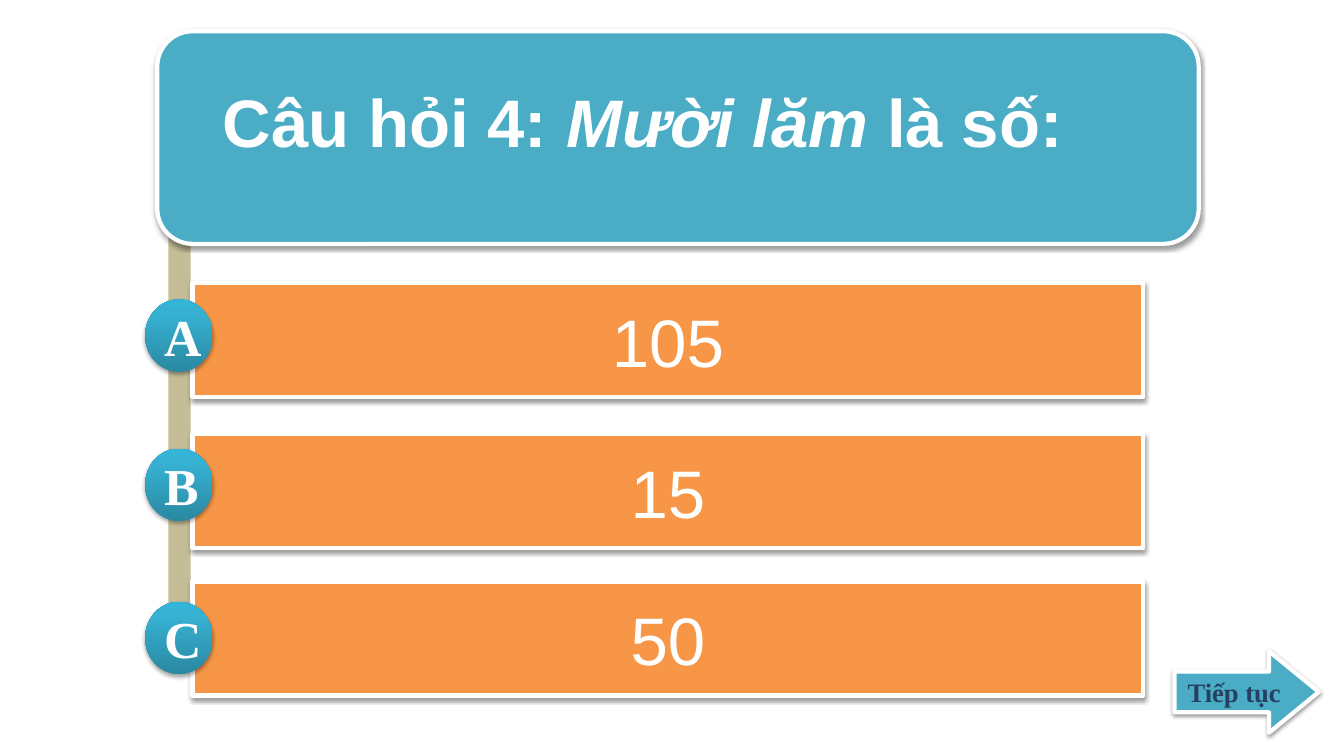
from dataclasses import dataclass

from lxml import etree
from pptx import Presentation
from pptx import util as u
from pptx.dml.color import RGBColor
from pptx.enum import shapes, text
from pptx.oxml import ns

WHITE = RGBColor(0xFF, 0xFF, 0xFF)
TEAL = RGBColor(0x4B, 0xAC, 0xC6)
ORANGE = RGBColor(0xF7, 0x96, 0x46)
TAN = RGBColor(0xC4, 0xBD, 0x97)
NAVY = RGBColor(0x25, 0x40, 0x61)
BADGE_STOPS = (
    (0, RGBColor(0x2A, 0x88, 0xA2)),
    (80, RGBColor(0x37, 0xB1, 0xD2)),
    (100, RGBColor(0x34, 0xB4, 0xD6)),
)
SANS, SERIF = "Arial", "Times New Roman"
SHAPE = shapes.MSO_SHAPE


@dataclass(frozen=True)
class Box:
    left: float
    top: float
    width: float
    height: float

    def lengths(self) -> tuple:
        return tuple(u.Inches(n) for n in (self.left, self.top, self.width, self.height))


@dataclass(frozen=True)
class Style:
    font: str
    size: float
    color: RGBColor
    bold: bool = False


@dataclass(frozen=True)
class Answer:
    letter: str
    label: str
    bar_top: float
    badge_top: float


ANSWER_STYLE = Style(SANS, 48, WHITE)
BADGE_STYLE = Style(SERIF, 37, WHITE, True)
TITLE_STYLE = Style(SANS, 48, WHITE, True)
NEXT_STYLE = Style(SERIF, 19, NAVY, True)
ANSWERS = (
    Answer("A", "105", 2.81, 2.97),
    Answer("B", "15", 4.31, 4.45),
    Answer("C", "50", 5.77, 5.97),
)
TITLE_SPANS = (("Câu hỏi 4: ", False), ("Mười lăm", True), (" là số:", False))


def set_font(para, style: Style) -> None:
    para.font.name = style.font
    para.font.size = u.Pt(style.size)
    para.font.bold = style.bold
    para.font.color.rgb = style.color


def add_shadow(shape, distance: float, opacity: int) -> None:
    effects = shape._element.spPr.find(ns.qn("a:effectLst"))
    shadow = etree.SubElement(
        effects, ns.qn("a:outerShdw"), blurRad=str(u.Pt(3.1)), dist=str(u.Pt(distance)),
        dir="5400000", rotWithShape="0")
    color = etree.SubElement(shadow, ns.qn("a:srgbClr"), val="000000")
    etree.SubElement(color, ns.qn("a:alpha"), val=str(opacity * 1000))


def add_plain(page, kind, box: Box):
    shape = page.shapes.add_shape(kind, *box.lengths())
    shape.shadow.inherit = False
    shape.line.fill.background()
    return shape


def add_panel(page, kind, box: Box, color: RGBColor):
    panel = add_plain(page, kind, box)
    panel.fill.solid()
    panel.fill.fore_color.rgb = color
    panel.line.color.rgb = WHITE
    panel.line.width = u.Pt(3)
    add_shadow(panel, 1.6, 38)
    return panel


def write_label(shape, label: str, style: Style) -> None:
    frame = shape.text_frame
    frame.word_wrap = True
    frame.vertical_anchor = text.MSO_ANCHOR.MIDDLE
    para = frame.paragraphs[0]
    para.text = label
    para.alignment = text.PP_ALIGN.CENTER
    set_font(para, style)


def add_badge(page, box: Box, letter: str) -> None:
    badge = add_plain(page, SHAPE.OVAL, box)
    badge.fill.gradient()
    badge.fill.gradient_angle = 90
    stops = badge._element.spPr.find(ns.qn("a:gradFill")).find(ns.qn("a:gsLst"))
    for stop in list(stops):
        stops.remove(stop)
    for position, color in BADGE_STOPS:
        stop = etree.SubElement(stops, ns.qn("a:gs"), pos=str(position * 1000))
        etree.SubElement(stop, ns.qn("a:srgbClr"), val=str(color))
    add_shadow(badge, 1.8, 35)
    write_label(badge, letter, BADGE_STYLE)


def add_answer(page, answer: Answer) -> None:
    bar = add_panel(page, SHAPE.RECTANGLE, Box(1.91, answer.bar_top, 9.43, 1.13), ORANGE)
    write_label(bar, answer.label, ANSWER_STYLE)
    add_badge(page, Box(1.44, answer.badge_top, 0.67, 0.72), answer.letter)


def add_title(page) -> None:
    title = page.shapes.add_textbox(*Box(2.11, 0.75, 9.22, 0.91).lengths())
    frame = title.text_frame
    frame.word_wrap = True
    frame.auto_size = text.MSO_AUTO_SIZE.SHAPE_TO_FIT_TEXT
    para = frame.paragraphs[0]
    for words, italic in TITLE_SPANS:
        span = para.add_run()
        span.text = words
        span.font.italic = italic
    set_font(para, TITLE_STYLE)


def main() -> None:
    deck = Presentation()
    deck.slide_width = u.Inches(13.33)
    deck.slide_height = u.Inches(7.5)
    page = deck.slides.add_slide(deck.slide_layouts[6])

    rail = add_plain(page, SHAPE.RECTANGLE, Box(1.67, 2.19, 0.22, 4.22))
    rail.fill.solid()
    rail.fill.fore_color.rgb = TAN
    add_panel(page, SHAPE.ROUNDED_RECTANGLE, Box(1.56, 0.31, 10.33, 2.11), TEAL)
    for answer in ANSWERS:
        add_answer(page, answer)
    add_title(page)

    arrow = add_panel(page, SHAPE.RIGHT_ARROW, Box(11.65, 6.46, 1.43, 0.81), TEAL)
    arrow.adjustments[0] = 0.5
    arrow.adjustments[1] = 0.61
    write_label(arrow, "Tiếp tục", NEXT_STYLE)
    deck.save("out.pptx")


if __name__ == "__main__":
    main()
